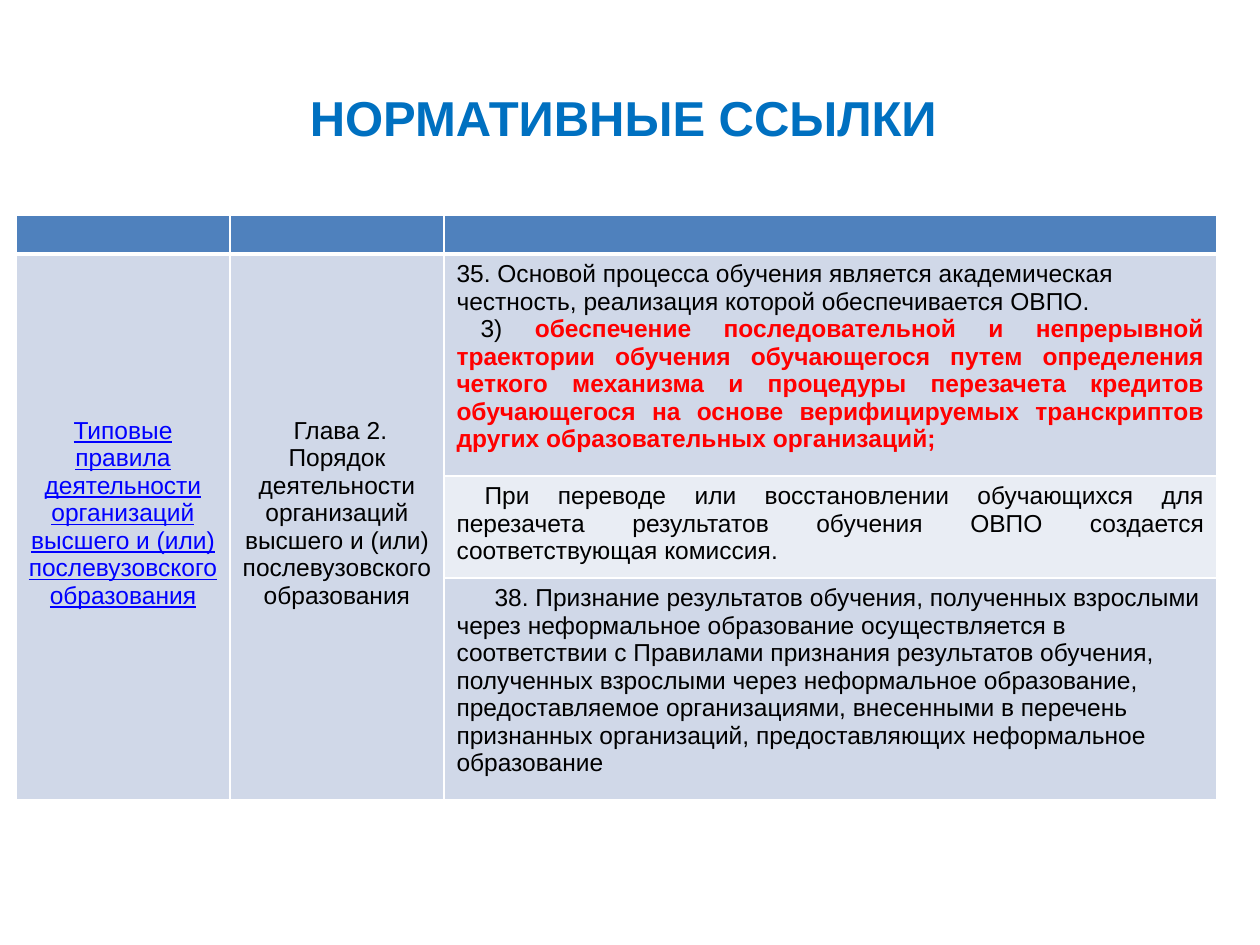
from lxml import etree
from pptx import Presentation
from pptx import util as u
from pptx.dml.color import RGBColor
from pptx.enum import text
from pptx.oxml.ns import qn

PX = 914400 // 126
FONT = "Arial"
COLORS = {
    "title": "0070C0", "header": "4F81BD", "band": "D0D8E8", "light": "E9EDF4",
    "border": "FFFFFF", "text": "000000", "link": "0000FF", "accent": "FF0000",
}
ALIGN = text.PP_ALIGN
COLS = [214, 214, 773]
ROWS = [39, 222, 102, 222]

RULES_NAME = "Типовые правила деятельности организаций высшего и (или) послевузовского образования"
CHAPTER = " Глава 2. Порядок деятельности организаций высшего и (или) послевузовского образования"
HONESTY = ("35. Основой процесса обучения является академическая честность, "
           "реализация которой обеспечивается ОВПО.")
TRAJECTORY = ("обеспечение последовательной и непрерывной траектории обучения обучающегося "
              "путем определения четкого механизма и процедуры перезачета кредитов обучающегося "
              "на основе верифицируемых транскриптов других образовательных организаций;")
TRANSFER = ("При переводе или восстановлении обучающихся для перезачета результатов обучения "
            "ОВПО создается соответствующая комиссия.")
RECOGNITION = ("38. Признание результатов обучения, полученных взрослыми через неформальное "
               "образование осуществляется в соответствии с Правилами признания результатов "
               "обучения, полученных взрослыми через неформальное образование, предоставляемое "
               "организациями, внесенными в перечень признанных организаций, предоставляющих "
               "неформальное образование")


def px(n):
    return u.Emu(n * PX)


def style(font, color="text", size=14, bold=False, underline=False):
    font.name, font.size = FONT, u.Pt(size)
    font.bold, font.underline = bold, underline
    font.color.rgb = RGBColor.from_string(COLORS[color])


def add_title(s, words):
    sp = s.shapes.title
    sp.left, sp.top, sp.width, sp.height = map(px, (63, 38, 1134, 157))
    tf = sp.text_frame
    tf.vertical_anchor = text.MSO_ANCHOR.MIDDLE
    p = tf.paragraphs[0]
    p.text, p.alignment = words, ALIGN.CENTER
    style(p.font, "title", 28, bold=True)


def set_borders(cell, bottom=1):
    """Draw white lines round a cell; they must precede its fill."""
    tcPr = cell._tc.get_or_add_tcPr()
    for i, (tag, width) in enumerate([("lnL", 1), ("lnR", 1), ("lnT", 1), ("lnB", bottom)]):
        ln = etree.Element(qn("a:" + tag), w=str(u.Pt(width)))
        fill = etree.SubElement(ln, qn("a:solidFill"))
        etree.SubElement(fill, qn("a:srgbClr"), val=COLORS["border"])
        tcPr.insert(i, ln)


def paint(cell, color, bottom=1):
    cell.fill.solid()
    cell.fill.fore_color.rgb = RGBColor.from_string(COLORS[color])
    set_borders(cell, bottom)


def write(p, words, align=ALIGN.LEFT, indent=0, **look):
    p.text, p.alignment = words, align
    style(p.font, **look)
    if indent:
        p._p.get_or_add_pPr().set("indent", str(px(indent)))


def add_rules_table(s):
    frame = s.shapes.add_table(len(ROWS), len(COLS), px(16), px(215),
                               px(sum(COLS)), px(sum(ROWS)))
    table = frame.table
    for col, width in zip(table.columns, COLS):
        col.width = px(width)
    for row, height in zip(table.rows, ROWS):
        row.height = px(height)

    # Empty header and banded body
    for cell in table.rows[0].cells:
        paint(cell, "header", bottom=3)
        cell.margin_top = cell.margin_bottom = 0
        style(cell.text_frame.paragraphs[0].font, size=12)
    for r, color in enumerate(["band", "light", "band"], 1):
        for cell in table.rows[r].cells:
            paint(cell, color)

    # Document and chapter, each over all body rows
    for c, (words, look) in enumerate([(RULES_NAME, {"color": "link", "underline": True}),
                                       (CHAPTER, {})]):
        cell = table.cell(1, c)
        cell.merge(table.cell(3, c))
        cell.vertical_anchor = text.MSO_ANCHOR.MIDDLE
        cell.margin_bottom = px(34)
        write(cell.text_frame.paragraphs[0], words, ALIGN.CENTER, **look)

    # Clauses
    tf = table.cell(1, 2).text_frame
    write(tf.paragraphs[0], HONESTY)
    p = tf.add_paragraph()
    write(p, "3) ", ALIGN.JUSTIFY, indent=24)
    r = p.add_run()
    r.text = TRAJECTORY
    style(r.font, "accent", bold=True)
    write(table.cell(2, 2).text_frame.paragraphs[0], TRANSFER, ALIGN.JUSTIFY, indent=28)
    write(table.cell(3, 2).text_frame.paragraphs[0], RECOGNITION, indent=38)


def main():
    prs = Presentation()
    prs.slide_width, prs.slide_height = u.Inches(10), u.Inches(7.5)
    s = prs.slides.add_slide(prs.slide_layouts[5])
    add_rules_table(s)
    add_title(s, "НОРМАТИВНЫЕ ССЫЛКИ ")
    prs.save("out.pptx")


if __name__ == "__main__":
    main()
